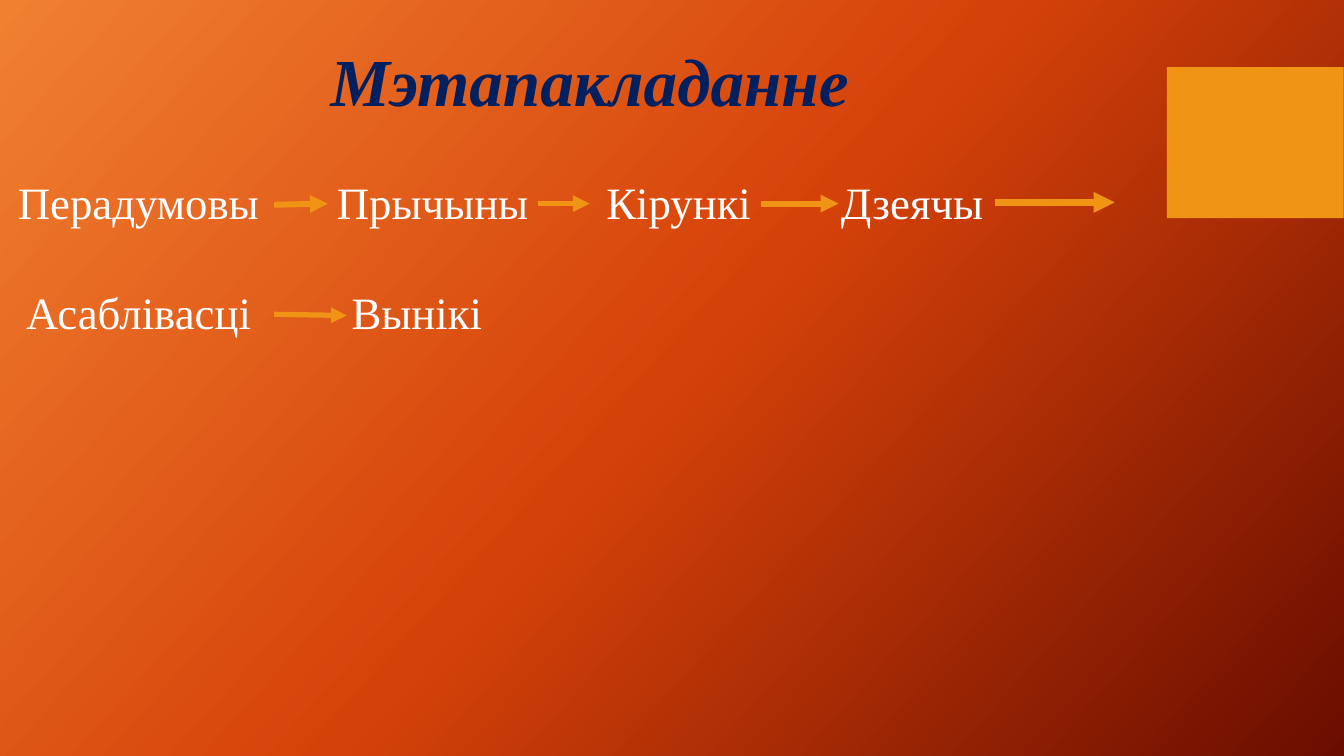
from copy import deepcopy

from pptx import Presentation
from pptx import dml, util as u
from pptx.dml import color as c
from pptx.enum import shapes, text
from pptx.oxml import ns, xmlchemy

SLIDE_SIZE = (33.87, 19.05)
GRADIENT = [(0, "F18031"), (0.5, "D54209"), (1, "6A0D00")]
GRADIENT_ANGLE = 42
ACCENT = "F09415"
ACCENT_BLOCK = (29.41, 1.69, 4.45, 3.81)

TITLE = {"size": u.Pt(48), "name": "Times New Roman", "bold": True, "italic": True}
BODY = {"size": u.Pt(32), "name": "Times New Roman"}
TEXTS = [
    (["Мэтапакладанне"], (5.87, 0.86, 17.98, 2.31), [], "center", TITLE, "002060"),
    (["Перадумовы", "Прычыны", "Кірункі", "Дзеячы"], (0.2, 4.29, 32.36, 1.63),
     [8.04, 14.83, 20.74], "left", BODY, "FFFFFF"),
    (["Асаблівасці", "Вынікі"], (0.41, 7.04, 24.66, 1.63),
     [8.2], "left", BODY, "FFFFFF"),
]
ARROWS = [
    (6.91, 5.16, 8.26, 5.13, 4.25),
    (13.56, 5.13, 14.86, 5.13, 4),
    (19.18, 5.13, 21.13, 5.13, 4.25),
    (25.07, 5.1, 28.09, 5.1, 5),
    (6.91, 7.92, 8.74, 7.95, 3.75),
]
ALIGNMENTS = {"center": text.PP_ALIGN.CENTER, "left": text.PP_ALIGN.LEFT}


def rgb(value):
    return c.RGBColor.from_string(value)


def cm(values):
    return [u.Cm(value) for value in values]


def add_child(parent, tag, **attributes):
    child = parent.makeelement(ns.qn(tag), attributes)
    parent.append(child)
    return child


def paint_background(slide):
    fill = slide.background.fill
    fill.gradient()
    fill.gradient_angle = 360 - GRADIENT_ANGLE
    stop_list = slide.element.find(".//" + ns.qn("a:gsLst"))
    stop_list.insert(1, deepcopy(stop_list[0]))
    for stop, (position, value) in zip(fill.gradient_stops, GRADIENT):
        stop.position = position
        stop.color.rgb = rgb(value)


def add_block(slide):
    block = slide.shapes.add_shape(shapes.MSO_SHAPE.RECTANGLE, *cm(ACCENT_BLOCK))
    block.shadow.inherit = False
    block.fill.solid()
    block.fill.fore_color.rgb = rgb(ACCENT)
    block.line.fill.background()


def add_text(slide, words, box, tabs, alignment, font_format, value):
    frame = slide.shapes.add_textbox(*cm(box)).text_frame
    frame.word_wrap = True
    paragraph = frame.paragraphs[0]
    paragraph.alignment = ALIGNMENTS[alignment]
    if tabs:
        tab_list = add_child(paragraph._p.get_or_add_pPr(), "a:tabLst")
        for position in cm(tabs):
            add_child(tab_list, "a:tab", pos=str(position), algn="l")
    run = paragraph.add_run()
    run.text = "\t".join(words)
    for name, setting in font_format.items():
        setattr(run.font, name, setting)
    run.font.color.rgb = rgb(value)


def add_arrow(slide, *values):
    *ends, width = values
    arrow = slide.shapes.add_connector(shapes.MSO_CONNECTOR.STRAIGHT, *cm(ends))
    arrow.line.color.rgb = rgb(ACCENT)
    arrow.line.width = u.Pt(width)
    add_child(arrow.line._get_or_add_ln(), "a:tailEnd", type="triangle")
    add_child(arrow._element.spPr, "a:effectLst")


def main():
    presentation = Presentation()
    presentation.slide_width, presentation.slide_height = cm(SLIDE_SIZE)
    slide = presentation.slides.add_slide(presentation.slide_layouts[6])
    paint_background(slide)
    add_block(slide)
    for item in TEXTS:
        add_text(slide, *item)
    for item in ARROWS:
        add_arrow(slide, *item)
    presentation.save("out.pptx")


if __name__ == "__main__":
    main()
